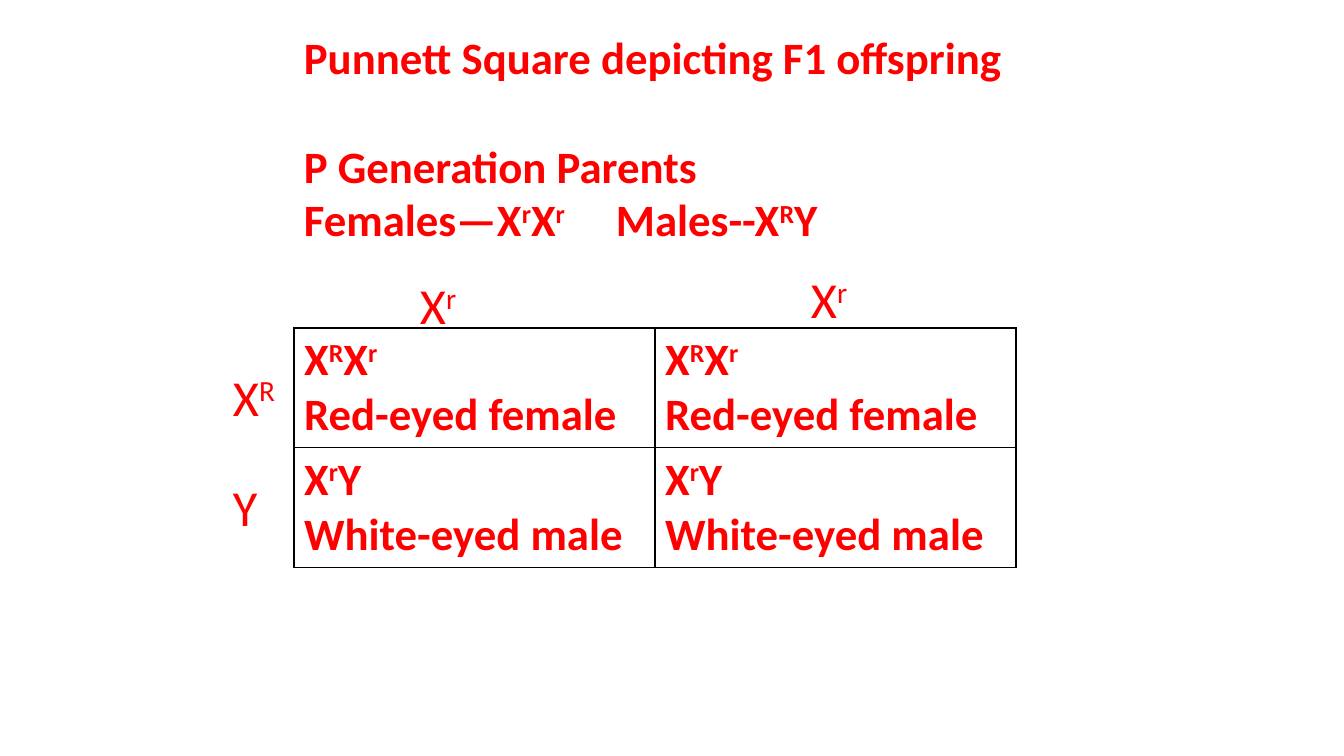
from dataclasses import dataclass

from lxml import etree
from pptx import Presentation
from pptx.dml.color import RGBColor
from pptx.enum.text import MSO_AUTO_SIZE
from pptx.oxml.ns import qn
from pptx.util import Emu, Pt

GROW = MSO_AUTO_SIZE.SHAPE_TO_FIT_TEXT


@dataclass(frozen=True)
class Theme:
    font: str = "Calibri"
    text: str = "FF0000"
    fill: str = "FFFFFF"
    border: str = "000000"
    body: int = 32
    label: int = 36
    section_gap: int = 39
    superscript: int = 30000


def px(n):
    return Emu(round(n * 914400 / 100.8))


class Deck:
    def __init__(self, theme):
        self.theme = theme
        self.prs = Presentation()
        self.prs.slide_width, self.prs.slide_height = px(1344), px(756)
        self.s = self.prs.slides.add_slide(self.prs.slide_layouts[6])

    def runs(self, p, text, size, bold):
        for i, part in enumerate(text.split("^")):
            r = p.add_run()
            r.text = part
            r.font.name = self.theme.font
            r.font.size = Pt(size)
            r.font.bold = bold
            r.font.color.rgb = RGBColor.from_string(self.theme.text)
            if i % 2:
                r._r.get_or_add_rPr().set("baseline", str(self.theme.superscript))

    def lines(self, tf, lines, size, bold):
        for i, line in enumerate(lines):
            p = tf.paragraphs[0] if i == 0 else tf.add_paragraph()
            self.runs(p, line, size, bold)

    def text(self, x, y, w, h, lines, size, bold=False):
        tf = self.s.shapes.add_textbox(px(x), px(y), px(w), px(h)).text_frame
        tf.word_wrap = True
        tf.auto_size = GROW
        self.lines(tf, lines, size, bold)
        return tf

    def tab(self, p, position):
        tabs = etree.SubElement(p._p.get_or_add_pPr(), qn("a:tabLst"))
        etree.SubElement(tabs, qn("a:tab"), pos=str(px(position)), algn="l")

    def borders(self, cell):
        tcPr = cell._tc.get_or_add_tcPr()
        for side in ("L", "R", "T", "B"):
            ln = etree.SubElement(tcPr, qn(f"a:ln{side}"), w=str(Pt(1)))
            fill = etree.SubElement(ln, qn("a:solidFill"))
            etree.SubElement(fill, qn("a:srgbClr"), val=self.theme.border)

    def table(self, x, y, w, h, rows):
        tbl = self.s.shapes.add_table(
            len(rows), len(rows[0]), px(x), px(y), px(w), px(h)).table
        tbl.first_row = tbl.horz_banding = False
        for i, row in enumerate(rows):
            for j, lines in enumerate(row):
                cell = tbl.cell(i, j)
                self.borders(cell)
                cell.fill.solid()
                cell.fill.fore_color.rgb = RGBColor.from_string(self.theme.fill)
                self.lines(cell.text_frame, lines, self.theme.body, True)


def main():
    theme = Theme()
    deck = Deck(theme)

    daughter = ("X^R^X^r", "Red-eyed female")
    son = ("X^r^Y", "White-eyed male")
    deck.table(294, 328, 722, 238, [[daughter] * 2, [son] * 2])

    heading = deck.text(294, 25, 756, 228, [
        "Punnett Square depicting F1 offspring",
        "P Generation Parents",
        "Females—X^r^X^r^\tMales--X^R^Y",
    ], theme.body, bold=True)
    heading.paragraphs[1].space_before = Pt(theme.section_gap)
    deck.tab(heading.paragraphs[2], 312)

    gametes = [("X^r", 410, 269), ("X^r", 801, 263),
               ("X^R", 223, 361), ("Y", 223, 471)]
    for allele, x, y in gametes:
        deck.text(x, y, 143, 71, [allele], theme.label)

    deck.prs.save("out.pptx")


if __name__ == "__main__":
    main()
